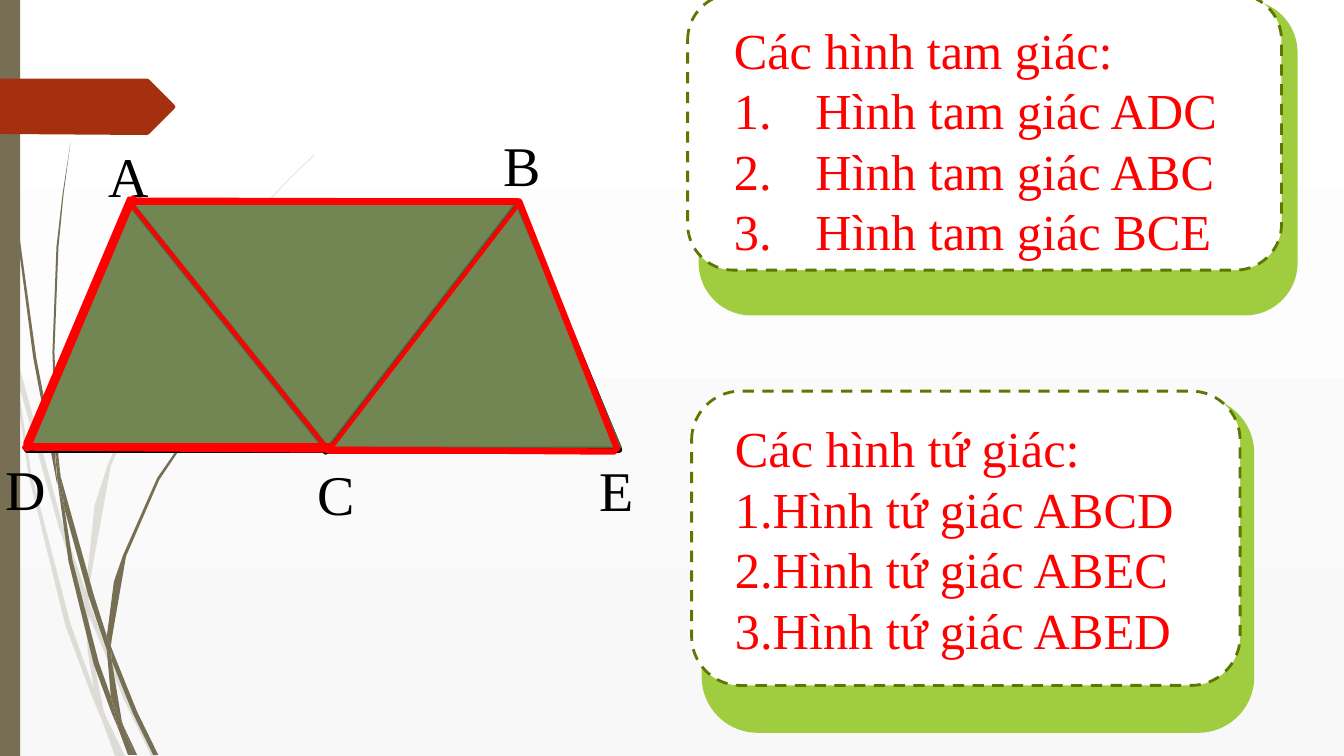
from pptx import Presentation
from pptx.dml.color import RGBColor
from pptx.enum.dml import MSO_LINE
from pptx.enum.shapes import MSO_CONNECTOR, MSO_SHAPE
from pptx.oxml.ns import qn
from pptx.util import Inches, Pt
from lxml import etree

RECTANGLE = MSO_SHAPE.RECTANGLE
ROUNDED = MSO_SHAPE.ROUNDED_RECTANGLE
TRIANGLE = MSO_SHAPE.ISOSCELES_TRIANGLE
STRAIGHT = MSO_CONNECTOR.STRAIGHT
DASH = MSO_LINE.DASH

FONT = "Times New Roman"
COLORS = {
    "white": "FFFFFF", "mist": "F8F8F8", "stem": "766F54", "rust": "A53010",
    "black": "000000", "red": "FF0000", "lime": "A0CC3F", "olive": "5F7700",
    "moss": "728653", "moss edge": "54633D",
}

# Outlines of the grass stems, as x, y points in inches
PALE_STEMS = [
    [(.11, 3.5), (.09, 3.22), (0, 2.82), (0, 2.99), (.1, 3.44)],
    [(.58, 5.22), (.84, 5.99), (.85, 5.86), (.62, 5.2), (.14, 3.45), (.17, 3.76)],
    [(.92, 6.07), (.88, 5.96), (.88, 6.1), (1.23, 6.94), (1.5, 7.5), (1.55, 7.5),
     (1.27, 6.92)],
    [(1.19, 7.5), (1.24, 7.5), (1.05, 7.11)],
    [(.93, 6.83), (.7, 6.19), (.31, 4.69), (.17, 3.76), (.11, 3.5), (.28, 4.7),
     (.65, 6.21), (.92, 6.93), (1.01, 7.14), (.99, 7.07)],
    [(.84, 5.99), (.87, 6.46), (.93, 6.83), (.96, 6.92), (1.05, 7.11), (1.03, 7.06),
     (.91, 6.46), (.88, 6.1), (.88, 6.08)],
    [(.88, 5.84), (1.1, 4.62), (1.6, 3.49), (2.29, 2.45), (2.68, 1.98), (2.9, 1.75),
     (3.12, 1.54), (3.12, 1.53), (2.89, 1.75), (2.68, 1.97), (2.28, 2.44),
     (1.58, 3.48), (1.07, 4.61), (.94, 5.01), (.85, 5.84), (.85, 5.86), (.88, 5.96)],
    [(1.01, 7.14), (1.14, 7.5), (1.19, 7.5)],
    [(.88, 6.08), (.88, 6.1), (.88, 5.96), (.85, 5.86), (.84, 5.99)],
    [(.96, 6.92), (.93, 6.83), (.99, 7.07), (1.01, 7.14), (1.19, 7.5), (1.05, 7.11)],
]
DARK_STEMS = [
    [(.07, 1.1), (.17, 2.33), (.33, 3.55), (.56, 4.77), (.57, 4.81), (.55, 4.57),
     (.55, 4.53), (.36, 3.55), (.19, 2.32), (.08, 1.09), (.05, .48), (.04, 0),
     (.03, 0), (.04, .48)],
    [(.88, 5.92), (1.06, 6.45), (1.06, 6.31), (.93, 5.9), (.6, 4.72), (.64, 5.05)],
    [(1.13, 6.49), (1.1, 6.41), (1.11, 6.56), (1.32, 7.08), (1.52, 7.49),
     (1.57, 7.49), (1.36, 7.06)],
    [(1.1, 6.91), (.98, 6.57), (.72, 5.56), (.64, 5.05), (.57, 4.77), (.68, 5.57),
     (.93, 6.59), (1.11, 7.08), (1.17, 7.22), (1.16, 7.17)],
    [(.6, 4.72), (.58, 4.53), (.54, 3.49), (.58, 2.45), (.63, 1.93), (.7, 1.41),
     (.62, 1.93), (.56, 2.45), (.52, 3.49), (.55, 4.49)],
    [(1.33, 7.49), (1.36, 7.49), (1.22, 7.19)],
    [(.57, 4.77), (.64, 5.05), (.6, 4.72), (.55, 4.49), (.55, 4.53)],
    [(1.11, 6.33), (1.25, 5.52), (1.58, 4.76), (2.05, 4.06), (2.31, 3.74),
     (2.61, 3.44), (2.6, 3.44), (2.31, 3.73), (2.04, 4.05), (1.56, 4.74),
     (1.22, 5.51), (1.13, 5.77), (1.06, 6.31), (1.1, 6.41)],
    [(1.17, 7.22), (1.27, 7.49), (1.31, 7.49)],
    [(1.06, 6.45), (1.1, 6.91), (1.16, 7.06), (1.22, 7.19), (1.21, 7.16),
     (1.11, 6.56), (1.09, 6.51)],
    [(1.06, 6.45), (1.09, 6.51), (1.11, 6.56), (1.1, 6.41), (1.06, 6.31)],
    [(1.16, 7.06), (1.1, 6.91), (1.16, 7.17), (1.17, 7.22), (1.3, 7.49),
     (1.33, 7.49), (1.22, 7.19)],
]
RUST_ARROW = [(0, .78), (1.46, .78), (1.48, .79), (1.73, 1.04), (1.74, 1.06),
              (1.73, 1.08), (1.48, 1.33), (1.46, 1.34), (0, 1.33)]

# Sides of the trapezium: x1, y1, x2, y2
BLACK_SIDES = [(1.28, 2.02, 5.13, 2.02), (.27, 4.46, 1.3, 2.02),
               (6.14, 4.46, 5.13, 2.02), (6.14, 4.46, .27, 4.46),
               (1.3, 2.01, 3.21, 4.45), (5.13, 2.03, 3.23, 4.48)]
THIN_RED_SIDES = [(1.3, 1.98, 5.13, 1.99), (.28, 4.42, 3.3, 4.42),
                  (.25, 4.4, 1.28, 1.97), (5.14, 2.03, 3.3, 4.42),
                  (5.14, 2.01, 1.28, 2), (6.09, 4.48, 3.26, 4.48),
                  (6.12, 4.46, 5.15, 2.01), (1.29, 2.01, 3.26, 4.47)]
THICK_RED_SIDES = [(5.14, 2, 1.32, 2), (6.09, 4.48, .25, 4.44),
                   (6.12, 4.45, 5.15, 2), (1.32, 1.97, .27, 4.45)]
VERTICES = [("A", .98, 1.36), ("B", 4.9, 1.25), ("D", -.04, 4.46),
            ("E", 5.85, 4.47), ("C", 3.05, 4.51)]


def rgb(name):
    return RGBColor.from_string(COLORS[name])


class SlideBuilder:
    def __init__(self, slide):
        self.slide = slide
        self.shapes = slide.shapes

    def background(self, top, bottom):
        fill = self.slide.background.fill
        fill.gradient()
        fill.gradient_angle = 270
        for stop, color, position in zip(fill.gradient_stops, (top, bottom), (0, 1)):
            stop.color.rgb = rgb(color)
            stop.position = position

    def paint(self, shape, fill, line=None, width=0, dash=None):
        shape.shadow.inherit = False
        shape.fill.solid()
        shape.fill.fore_color.rgb = rgb(fill)
        if line is None:
            shape.line.fill.background()
        else:
            shape.line.color.rgb = rgb(line)
            shape.line.width = Pt(width)
            shape.line.dash_style = dash
        return shape

    def preset(self, kind, box, fill, **outline):
        shape = self.shapes.add_shape(kind, *map(Inches, box))
        return self.paint(shape, fill, **outline)

    def outline(self, points, fill, opacity=100):
        corners = [(Inches(x), Inches(y)) for x, y in points]
        builder = self.shapes.build_freeform(*corners[0])
        builder.add_line_segments(corners[1:])
        shape = self.paint(builder.convert_to_shape(), fill)
        if opacity < 100:
            color = shape.fill._xPr.find(qn("a:solidFill"))[0]
            etree.SubElement(color, qn("a:alpha"), val=str(opacity * 1000))

    def side(self, ends, color, width):
        connector = self.shapes.add_connector(STRAIGHT, *map(Inches, ends))
        connector.line.color.rgb = rgb(color)
        connector.line.width = Pt(width)
        connector.line._ln.set("cap", "rnd")
        etree.SubElement(connector._element.spPr, qn("a:effectLst"))

    def text(self, box, lines, size, color, indent=0):
        frame = self.shapes.add_textbox(*map(Inches, box)).text_frame
        frame.word_wrap = True
        for index, line in enumerate(lines):
            paragraph = frame.add_paragraph() if index else frame.paragraphs[0]
            paragraph.text = line
            if index:
                self.number(paragraph, indent)
            paragraph.font.name = FONT
            paragraph.font.size = Pt(size)
            paragraph.font.color.rgb = rgb(color)

    def number(self, paragraph, indent):
        properties = paragraph._p.get_or_add_pPr()
        properties.set("marL", str(Inches(indent)))
        properties.set("indent", str(-Inches(indent)))
        etree.SubElement(properties, qn("a:buFont"), typeface=FONT)
        etree.SubElement(properties, qn("a:buAutoNum"), type="arabicPeriod")

    def card(self, back, front, text_box, lines, indent=0):
        self.preset(ROUNDED, back, "lime")
        self.preset(ROUNDED, front, "white", line="olive", width=2, dash=DASH)
        self.text(text_box, lines, 36, "red", indent)


def main():
    presentation = Presentation()
    presentation.slide_width, presentation.slide_height = Inches(13.33), Inches(7.5)
    builder = SlideBuilder(presentation.slides.add_slide(presentation.slide_layouts[6]))

    # Backdrop
    builder.background("white", "mist")
    for stem in PALE_STEMS:
        builder.outline(stem, "stem", opacity=20)
    for stem in DARK_STEMS:
        builder.outline(stem, "stem")
    builder.preset(RECTANGLE, (0, 0, .2, 7.5), "stem")
    builder.outline(RUST_ARROW, "rust")

    # Trapezium outline and vertex letters
    for ends in BLACK_SIDES:
        builder.side(ends, "black", 4.5)
    for letter, left, top in VERTICES:
        builder.text((left, top, .82, .77), [letter], 40, "black")

    # Answer cards
    builder.card((6.93, 0, 5.94, 3.13), (6.82, -.06, 5.89, 2.74), (7.18, .14, 6.16, 2.52),
                 ["Các hình tam giác:"] + [f"Hình tam giác {name}" for name in ("ADC", "ABC", "BCE")],
                 indent=.81)
    builder.card((6.96, 3.94, 5.48, 3.33), (6.86, 3.88, 5.44, 2.92), (7.19, 4.09, 5.68, 2.52),
                 ["Các hình tứ giác:"] + [f"Hình tứ giác {name}" for name in ("ABCD", "ABEC", "ABED")])

    # Filled triangles
    for box, apex, flipped in [((.27, 2.06, 2.94, 2.39), .35, False),
                               ((1.32, 2.02, 3.79, 2.41), .51, True),
                               ((3.3, 2.05, 2.86, 2.39), .64, False)]:
        triangle = builder.preset(TRIANGLE, box, "moss", line="moss edge", width=1.25)
        triangle.adjustments[0] = apex
        if flipped:
            triangle._element.spPr.xfrm.set("flipV", "1")

    # Red tracing
    for sides, width in ((THIN_RED_SIDES, 3), (THICK_RED_SIDES, 4.5)):
        for ends in sides:
            builder.side(ends, "red", width)

    presentation.save("out.pptx")


if __name__ == "__main__":
    main()
